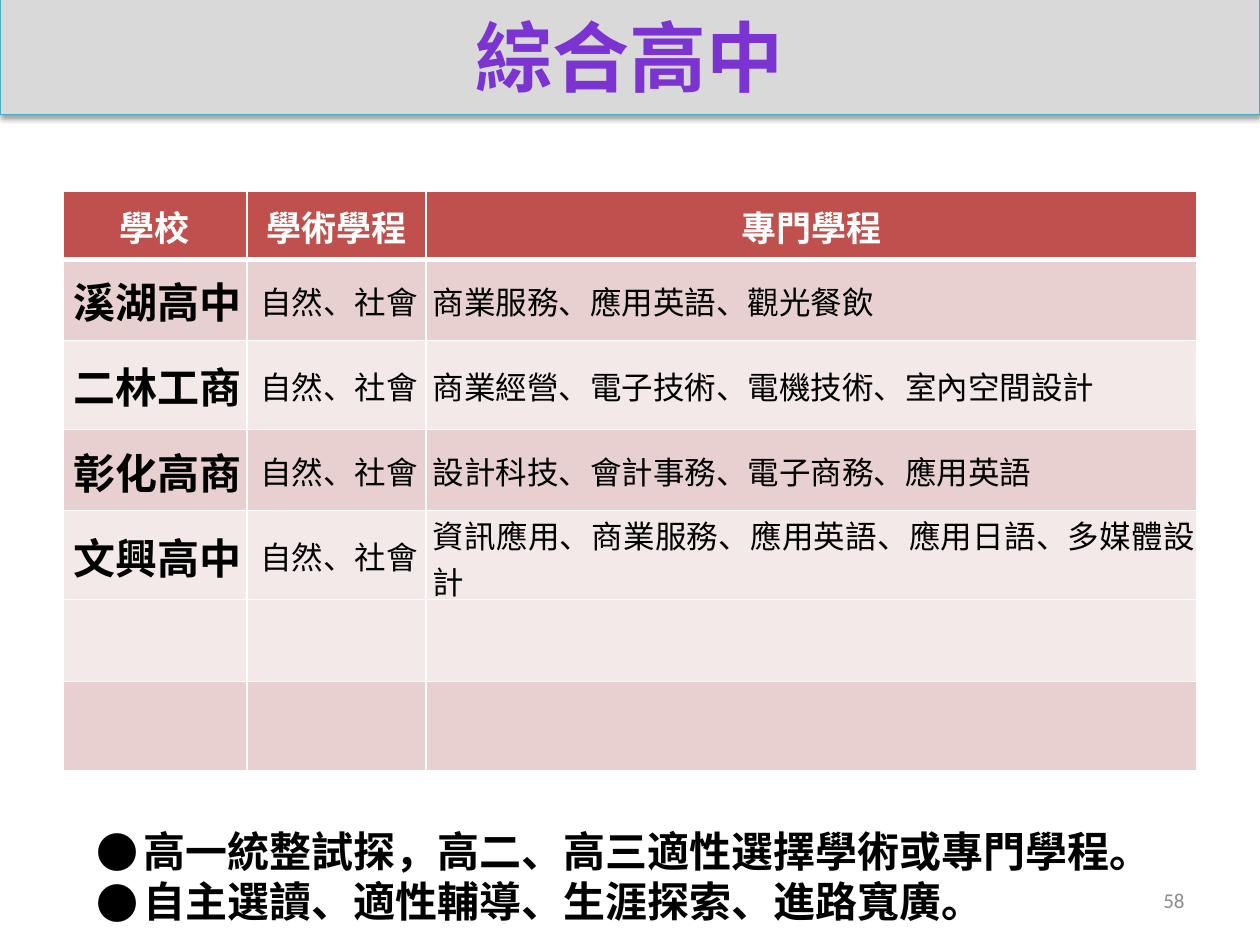
from lxml import etree
from pptx import Presentation
from pptx.dml.color import RGBColor
from pptx.enum.text import MSO_ANCHOR, PP_ALIGN
from pptx.oxml.ns import qn
from pptx.util import Cm, Pt

MID = MSO_ANCHOR.MIDDLE
LEFT, CENTER, RIGHT, JUST = (
    PP_ALIGN.LEFT, PP_ALIGN.CENTER, PP_ALIGN.RIGHT, PP_ALIGN.JUSTIFY)

# Content
TITLE = "綜合高中"
PAGE = "58"
HEAD = ["學校", "學術學程", "專門學程"]
TRACK = "自然、社會"
SCHOOLS = [
    ("溪湖高中", "商業服務、應用英語、觀光餐飲", JUST),
    ("二林工商", "商業經營、電子技術、電機技術、室內空間設計", LEFT),
    ("彰化高商", "設計科技、會計事務、電子商務、應用英語", JUST),
    ("文興高中", "資訊應用、商業服務、應用英語、應用日語、多媒體設計", JUST),
]
POINTS = [
    "高一統整試探，高二、高三適性選擇學術或專門學程。",
    "自主選讀、適性輔導、生涯探索、進路寬廣。",
]
COLS = [3.71, 3.61, 15.54]
ROWS = [1.37, 1.63, 1.8, 1.63, 1.8, 1.65, 1.8]

THEME = {
    "latin": "Calibri", "cjk": "Noto Sans CJK SC",
    "white": "FFFFFF", "black": "000000", "grey": "8C8C8C",
    "bar": "D9D9D9", "edge": "4BACC6", "title": "7B34D2",
    "head": "C0504D", "dark": "E8D0D0", "pale": "F4E9E9",
    "big": 44, "name": 24, "label": 20, "body": 18, "small": 12,
}


def rgb(key):
    return RGBColor.from_string(THEME[key])


def paint(shape, key):
    shape.fill.solid()
    shape.fill.fore_color.rgb = rgb(key)


def style(para, size, color, bold=False, align=LEFT, face="cjk"):
    para.alignment = align
    for run in para.runs:
        font = run.font
        font.size, font.bold = Pt(THEME[size]), bold
        font.color.rgb = rgb(color)
        font.name = THEME[face]
        east = etree.SubElement(run._r.get_or_add_rPr(), qn("a:ea"))
        east.set("typeface", THEME["cjk"])


def shade(shape):
    shape.shadow.inherit = False
    effects = shape._element.spPr.find(qn("a:effectLst"))
    drop = etree.SubElement(
        effects, qn("a:outerShdw"), blurRad=str(Pt(3.1)),
        dist=str(Pt(1.6)), dir="5400000", rotWithShape="0")
    tint = etree.SubElement(drop, qn("a:srgbClr"), val=THEME["black"])
    etree.SubElement(tint, qn("a:alpha"), val="38000")


def border(cell, widths):
    props = cell._tc.get_or_add_tcPr()
    for spot, (side, width) in enumerate(zip("LRTB", widths)):
        line = etree.Element(qn(f"a:ln{side}"), w=str(Pt(width)))
        fill = etree.SubElement(line, qn("a:solidFill"))
        etree.SubElement(fill, qn("a:srgbClr"), val=THEME["white"])
        props.insert(spot, line)


def add_title(slide):
    bar = slide.shapes.title
    bar.left, bar.top, bar.width, bar.height = (
        Cm(0), Cm(-0.05), Cm(25.4), Cm(2.36))
    paint(bar, "bar")
    bar.line.color.rgb = rgb("edge")
    bar.line.width = Pt(0.75)
    shade(bar)
    bar.text_frame.text = TITLE
    bar.text_frame.vertical_anchor = MID
    style(bar.text_frame.paragraphs[0], "big", "title", True, CENTER)


def add_grid(slide):
    grid = slide.shapes.add_table(
        len(ROWS), len(COLS), Cm(1.27), Cm(3.86),
        Cm(sum(COLS)), Cm(sum(ROWS))).table
    for col, width in zip(grid.columns, COLS):
        col.width = Cm(width)
    for row, height in zip(grid.rows, ROWS):
        row.height = Cm(height)

    # Fills and borders
    bands = ["head", "dark", "pale", "dark", "pale", "pale", "dark"]
    for r, band in enumerate(bands):
        for c in range(len(COLS)):
            cell = grid.cell(r, c)
            paint(cell, band)
            border(cell, (1, 1, 3 if r == 1 else 1, 3 if r == 0 else 1))

    # Text
    looks = [("name", True), ("body", False), ("body", False)]
    lines = [HEAD] + [(name, TRACK, course) for name, course, _ in SCHOOLS]
    for r, line in enumerate(lines):
        for c, text in enumerate(line):
            cell = grid.cell(r, c)
            cell.text = text
            cell.vertical_anchor = MID
            cell.margin_left = cell.margin_right = cell.margin_top = Cm(0.03)
            cell.margin_bottom = Cm(0)
            para = cell.text_frame.paragraphs[0]
            if r == 0:
                style(para, "label", "white", True, CENTER, "latin")
                continue
            para._p.get_or_add_pPr().set("marL", str(Cm(0.1)))
            size, bold = looks[c]
            align = SCHOOLS[r - 1][2] if c == 2 else CENTER
            style(para, size, "black", bold, align, "latin")


def add_points(slide):
    box = slide.shapes.add_textbox(Cm(1.7), Cm(16.51), Cm(22), Cm(2.31))
    frame = box.text_frame
    frame.word_wrap = True
    frame.text = "\n".join(POINTS)
    for para in frame.paragraphs:
        props = para._p.get_or_add_pPr()
        props.set("marL", str(Cm(0.95)))
        props.set("indent", str(Cm(-0.95)))
        etree.SubElement(props, qn("a:buFont"), typeface=THEME["cjk"])
        etree.SubElement(props, qn("a:buChar"), char="●")
        style(para, "name", "black", True)


def add_page(slide):
    box = slide.shapes.add_textbox(Cm(18.2), Cm(17.65), Cm(5.93), Cm(1.01))
    frame = box.text_frame
    frame.word_wrap = True
    frame.text = PAGE
    frame.vertical_anchor = MID
    style(frame.paragraphs[0], "small", "grey", False, RIGHT, "latin")


def main():
    deck = Presentation()
    deck.slide_width, deck.slide_height = Cm(25.4), Cm(19.05)
    slide = deck.slides.add_slide(deck.slide_layouts[5])
    add_title(slide)
    add_page(slide)
    add_points(slide)
    add_grid(slide)
    deck.save("out.pptx")


if __name__ == "__main__":
    main()
